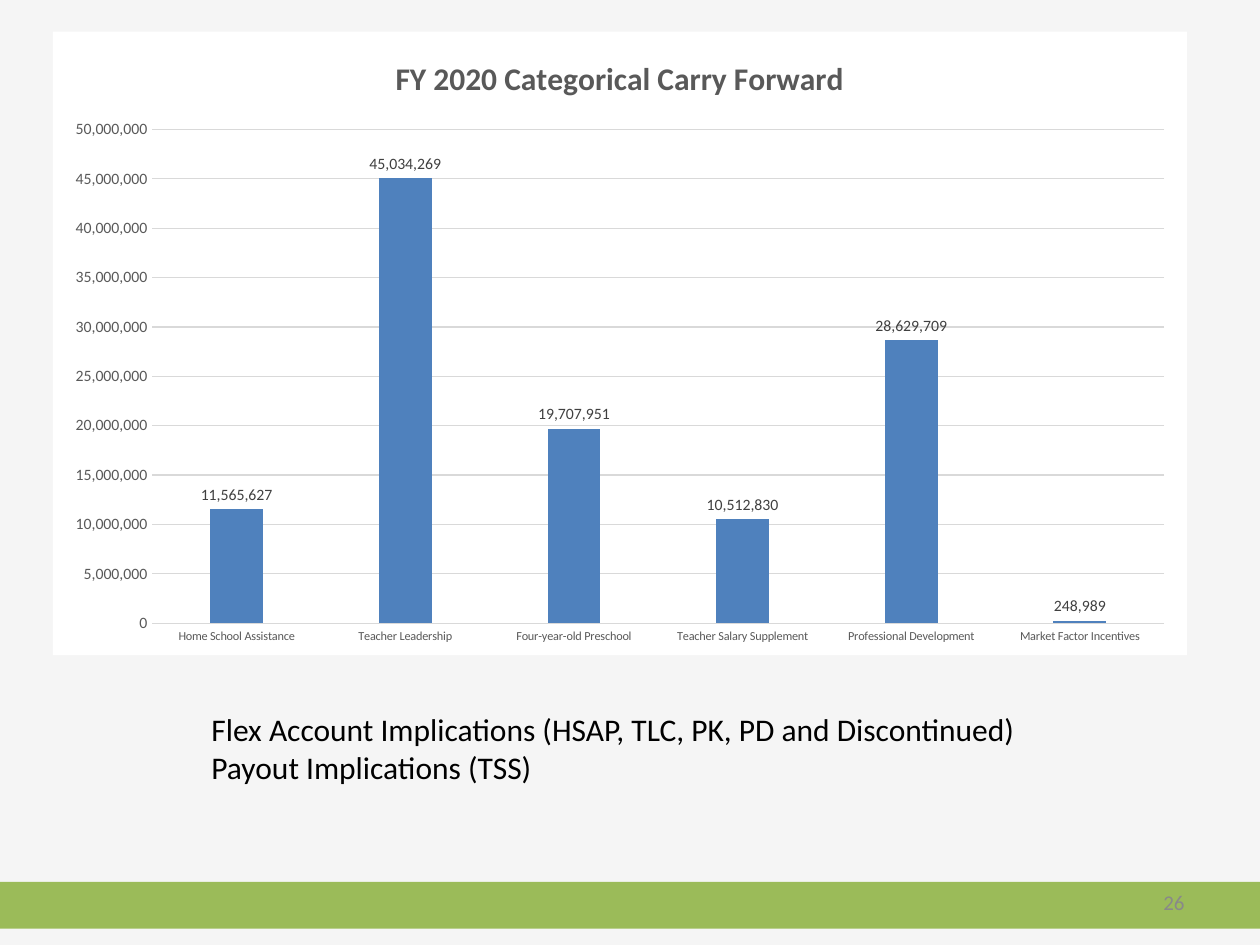
"""Build the FY 2020 categorical carry forward slide."""
from lxml import etree
from pptx import Presentation
from pptx.chart.data import CategoryChartData
from pptx.dml.color import RGBColor
from pptx.enum.chart import XL_CHART_TYPE, XL_LABEL_POSITION, XL_TICK_MARK
from pptx.enum.shapes import MSO_SHAPE
from pptx.enum.text import MSO_ANCHOR, PP_ALIGN
from pptx.oxml import parse_xml
from pptx.oxml.ns import nsdecls
from pptx.util import Inches, Pt

COLUMN = XL_CHART_TYPE.COLUMN_CLUSTERED
OUTSIDE_END = XL_LABEL_POSITION.OUTSIDE_END
NO_TICK = XL_TICK_MARK.NONE
RECTANGLE = MSO_SHAPE.RECTANGLE
MIDDLE = MSO_ANCHOR.MIDDLE
LEFT, RIGHT = PP_ALIGN.LEFT, PP_ALIGN.RIGHT

BACKGROUND = RGBColor(0xF5, 0xF5, 0xF5)
GREEN = RGBColor(0x9B, 0xBB, 0x59)
BLUE = RGBColor(0x4F, 0x81, 0xBD)
WHITE = RGBColor(0xFF, 0xFF, 0xFF)
BLACK = RGBColor(0, 0, 0)
LABEL_GRAY = RGBColor(0x40, 0x40, 0x40)
AXIS_GRAY = RGBColor(0x59, 0x59, 0x59)
NUMBER_GRAY = RGBColor(0x89, 0x89, 0x89)
GRID_GRAY = RGBColor(0xD9, 0xD9, 0xD9)
NUMBER_FORMAT = "#,##0"

CARRY_FORWARD = {
    "Home School Assistance": 11565627,
    "Teacher Leadership": 45034269,
    "Four-year-old Preschool": 19707951,
    "Teacher Salary Supplement": 10512830,
    "Professional Development": 28629709,
    "Market Factor Incentives": 248989,
}


def style_font(font, size, color, bold=False):
    font.name = "Calibri"
    font.size = Pt(size)
    font.bold = bold
    font.color.rgb = color


def add_text(left, top, width, height, lines, size, color, align):
    frame = slide.shapes.add_textbox(
        Inches(left), Inches(top), Inches(width), Inches(height)).text_frame
    frame.word_wrap = True
    frame.vertical_anchor = MIDDLE
    frame.text = "\n".join(lines)
    for paragraph in frame.paragraphs:
        paragraph.alignment = align
        style_font(paragraph.runs[0].font, size, color)


prs = Presentation()
prs.slide_width, prs.slide_height = Inches(10), Inches(7.5)
slide = prs.slides.add_slide(prs.slide_layouts[6])
slide.background.fill.solid()
slide.background.fill.fore_color.rgb = BACKGROUND

footer = slide.shapes.add_shape(
    RECTANGLE, Inches(0), Inches(7), Inches(10), Inches(0.37))
footer.shadow.inherit = False
footer.fill.solid()
footer.fill.fore_color.rgb = GREEN
footer.line.fill.background()

carry_data = CategoryChartData(number_format=NUMBER_FORMAT)
carry_data.categories = list(CARRY_FORWARD)
carry_data.add_series("Series 1", list(CARRY_FORWARD.values()))
chart = slide.shapes.add_chart(
    COLUMN, Inches(0.42), Inches(0.25), Inches(9), Inches(4.95), carry_data).chart
style_font(chart.font, 10, BLACK)
chart.has_legend = False
chart.has_title = True
title = chart.chart_title.text_frame
title.text = "FY 2020 Categorical Carry Forward"
style_font(title.paragraphs[0].runs[0].font, 18, AXIS_GRAY, bold=True)
chart.chart_title.include_in_layout = False

chart_area = parse_xml(
    f'<c:spPr {nsdecls("c", "a")}><a:solidFill><a:srgbClr val="{WHITE}"/>'
    "</a:solidFill><a:ln><a:noFill/></a:ln></c:spPr>")
chart.element.chart.addnext(chart_area)
rounded = chart.element.find("{*}roundedCorners")
if rounded is None:
    rounded = etree.Element(etree.QName(chart_area.nsmap["c"], "roundedCorners"))
    chart.element.find("{*}date1904").addnext(rounded)
rounded.set("val", "0")

programs, dollars = chart.category_axis, chart.value_axis
for axis, size in ((programs, 7), (dollars, 9)):
    axis.major_tick_mark = NO_TICK
    axis.minor_tick_mark = NO_TICK
    style_font(axis.tick_labels.font, size, AXIS_GRAY)
dollars.minimum_scale, dollars.maximum_scale = 0, 50000000
dollars.major_unit = 5000000
dollars.tick_labels.number_format = NUMBER_FORMAT
dollars.tick_labels.number_format_is_linked = False
dollars.format.line.fill.background()
for line in (programs.format.line, dollars.major_gridlines.format.line):
    line.color.rgb = GRID_GRAY
    line.width = Pt(0.75)

plot = chart.plots[0]
plot.gap_width, plot.overlap = 219, -27
plot.vary_by_categories = False
amounts = plot.series[0]
amounts.format.fill.solid()
amounts.format.fill.fore_color.rgb = BLUE
labels = amounts.data_labels
labels.show_value = True
labels.number_format = NUMBER_FORMAT
labels.number_format_is_linked = False
labels.position = OUTSIDE_END
style_font(labels.font, 9, LABEL_GRAY)

add_text(1.58, 5.58, 7.5, 0.71,
         ["Flex Account Implications (HSAP, TLC, PK, PD and Discontinued)",
          "Payout Implications (TSS)"], 18, BLACK, LEFT)
add_text(8.5, 6.96, 1, 0.4, ["26"], 12, NUMBER_GRAY, RIGHT)

prs.save("out.pptx")
